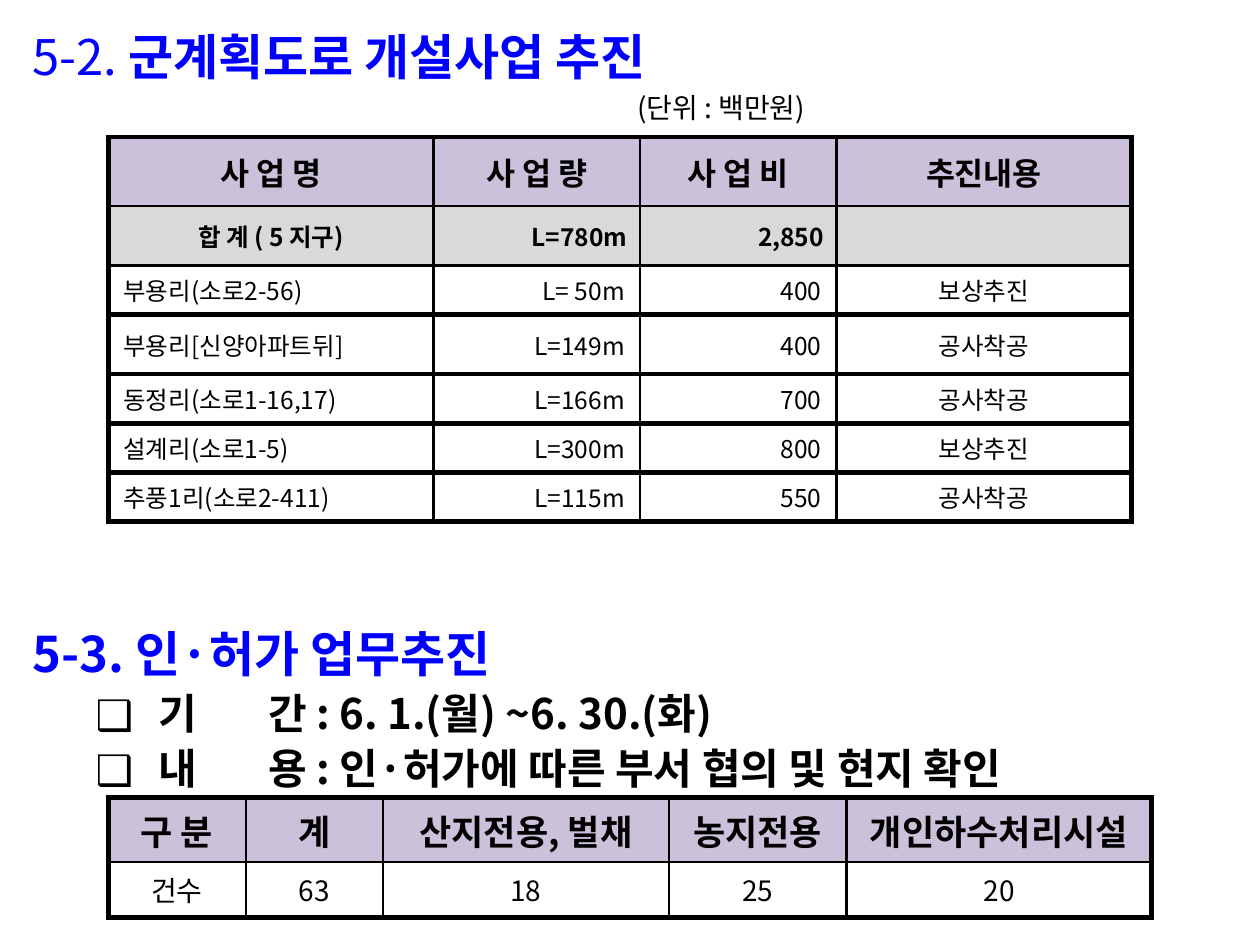
"""Build the slide on county road works and permit reviews."""
import lxml.etree
import pptx
import pptx.dml.color
import pptx.enum.text
import pptx.oxml.ns
import pptx.util

WIDTH, HEIGHT = 10, 7.5
FONT = "Noto Sans CJK KR"
THIN, THICK = 1.41, 3
COLORS = {"title": "0000FF", "ink": "000000", "head": "CCC1DA", "total": "D9D9D9", "page": "FFFFFF"}
ALIGN = {name[0].lower(): getattr(pptx.enum.text.PP_ALIGN, name) for name in ("LEFT", "CENTER", "RIGHT")}
TITLE = {"size": 28, "bold": True, "color": "title"}
UNIT = {"size": 16, "bold": False, "color": "ink"}
ITEM = {"size": 24, "bold": True, "color": "ink"}

ROADS = [
    ["사 업 명", "사 업 량", "사 업 비", "추진내용"],
    ["합 계 ( 5 지구)", "L=780m", "2,850", ""],
    ["부용리(소로2-56)", "L= 50m", "400", "보상추진"],
    ["부용리[신양아파트뒤]", "L=149m", "400", "공사착공"],
    ["동정리(소로1-16,17)", "L=166m", "700", "공사착공"],
    ["설계리(소로1-5)", "L=300m", "800", "보상추진"],
    ["추풍1리(소로2-411)", "L=115m", "550", "공사착공"],
]
PERMITS = [
    ["구 분", "계", "산지전용, 벌채", "농지전용", "개인하수처리시설"],
    ["건수", "63", "18", "25", "20"],
]
HEAD = {"size": 18, "bold": True, "fill": "head", "align": "cccc", "inset": 0.1, "before": 3.6}
TOTAL = {"size": 14, "bold": True, "fill": "total", "align": "crrc", "inset": 0.1, "before": 0}
ROAD = {"size": 14, "bold": False, "fill": "page", "align": "lrrc", "inset": 0.12, "before": 0}
PERMIT_HEAD = {**HEAD, "size": 20, "align": "ccccc", "before": 4}
PERMIT = {**ROAD, "size": 16, "align": "ccccc", "inset": 0.1}


def across(share):
    return pptx.util.Inches(WIDTH * share)


def down(share):
    return pptx.util.Inches(HEIGHT * share)


def add_child(parent, tag, **values):
    return lxml.etree.SubElement(parent, pptx.oxml.ns.qn(tag), values)


def set_values(target, values):
    for name, value in values.items():
        setattr(target, name, value)


def rgb(name):
    return pptx.dml.color.RGBColor.from_string(COLORS[name])


def add_span(para, text, size, bold, color="ink"):
    span = para.add_run()
    span.text = text
    span.font.color.rgb = rgb(color)
    set_values(span.font, {"size": pptx.util.Pt(size), "bold": bold, "name": FONT})
    add_child(span.font._element, "a:ea", typeface=FONT)


def add_box(page, left, top, width, height, inset_top=0.05):
    box = page.shapes.add_textbox(across(left), down(top), across(width), down(height))
    set_values(box.text_frame, {"word_wrap": True, "margin_top": pptx.util.Inches(inset_top)})
    return box.text_frame


def add_para(frame, spans, first=False, left=0, hang=0, bullet=None, tab=None, **spacing):
    para = frame.paragraphs[0] if first else frame.add_paragraph()
    set_values(para, spacing)
    rules = para._p.get_or_add_pPr()
    rules.set("marL", str(across(left)))
    rules.set("indent", str(across(-hang)))
    if bullet:
        color = add_child(rules, "a:buClr")
        add_child(color, "a:srgbClr", val=COLORS["ink"])
        add_child(rules, "a:buFont", typeface=FONT)
        add_child(rules, "a:buChar", char=bullet)
    if tab:
        stops = add_child(rules, "a:tabLst")
        add_child(stops, "a:tab", pos=str(across(tab)), algn="l")
    for text, style in spans:
        add_span(para, text, **style)


def add_borders(cell, sides):
    rules = cell._tc.get_or_add_tcPr()
    for side, weight in zip("LRTB", sides):
        line = add_child(rules, "a:ln" + side, w=str(pptx.util.Pt(weight)))
        add_child(add_child(line, "a:solidFill"), "a:srgbClr", val=COLORS["ink"])


def fill_cell(cell, text, style, align, sides):
    add_borders(cell, sides)
    cell.fill.solid()
    cell.fill.fore_color.rgb = rgb(style["fill"])
    inset = pptx.util.Inches(style["inset"])
    set_values(cell, {"margin_left": inset, "margin_right": inset,
                      "vertical_anchor": pptx.enum.text.MSO_ANCHOR.MIDDLE})
    para = cell.text_frame.paragraphs[0]
    set_values(para, {"alignment": ALIGN[align], "space_before": pptx.util.Pt(style["before"])})
    if text:
        add_span(para, text, style["size"], style["bold"])


def add_grid(page, left, top, columns, rows, content, styles, rules):
    shape = page.shapes.add_table(len(rows), len(columns), across(left), down(top),
                                  across(sum(columns)), down(sum(rows)))
    table = shape.table
    for column, share in zip(table.columns, columns):
        column.width = across(share)
    for row, share in zip(table.rows, rows):
        row.height = down(share)
    uprights = [THICK] + [THIN] * (len(columns) - 1) + [THICK]
    for r, (texts, style) in enumerate(zip(content, styles)):
        for c, text in enumerate(texts):
            sides = uprights[c:c + 2] + rules[r:r + 2]
            fill_cell(table.cell(r, c), text, style, style["align"][c], sides)


def main():
    deck = pptx.Presentation()
    set_values(deck, {"slide_width": across(1), "slide_height": down(1)})
    page = deck.slides.add_slide(deck.slide_layouts[6])

    roads = add_box(page, 0.016, 0.021, 0.953, 0.12)
    add_para(roads, [("5-2. ", {**TITLE, "bold": False}), ("군계획도로 개설사업 추진", TITLE)], first=True)
    add_para(roads, [("(단위 : 백만원)", UNIT)], left=0.48, space_before=pptx.util.Pt(3.2))
    add_grid(page, 0.086, 0.145, [0.258, 0.164, 0.156, 0.234],
             [0.073, 0.063, 0.052, 0.063, 0.052, 0.052, 0.052], ROADS,
             [HEAD, TOTAL] + [ROAD] * 5, [THICK, THIN, THIN] + [THICK] * 5)

    permits = add_box(page, 0.016, 0.636, 0.961, 0.2, inset_top=0.13)
    add_para(permits, [("5-3. 인·허가 업무추진", TITLE)], first=True, line_spacing=1.1)
    for text in ("기\t간 : 6. 1.(월) ~6. 30.(화)", "내\t용 : 인·허가에 따른 부서 협의 및 현지 확인"):
        add_para(permits, [(text, ITEM)], left=0.1, hang=0.05, bullet="❑", tab=0.187, line_spacing=1.1)
    add_grid(page, 0.086, 0.844, [0.109, 0.109, 0.227, 0.141, 0.242], [0.068, 0.059],
             PERMITS, [PERMIT_HEAD, PERMIT], [THICK, THIN, THICK])
    deck.save("out.pptx")


main()
